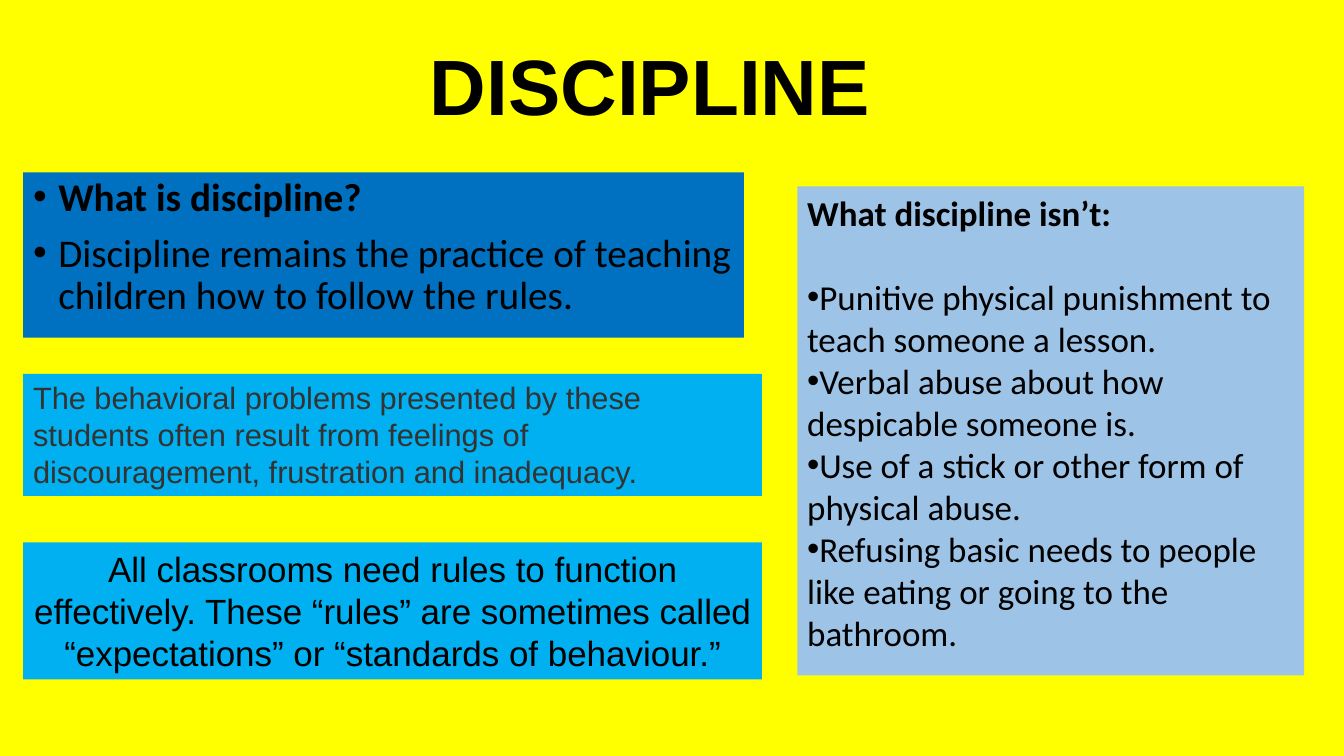
from dataclasses import dataclass

from lxml.etree import SubElement
from pptx import Presentation
from pptx.dml.color import RGBColor
from pptx.enum.shapes import MSO_SHAPE
from pptx.enum.text import MSO_ANCHOR, PP_ALIGN
from pptx.oxml.ns import qn
from pptx.util import Pt


@dataclass(frozen=True)
class Theme:
    background: str = "FFFF00"
    definition: str = "0070C0"
    note: str = "00B0F0"
    contrast: str = "9DC3E6"
    ink: str = "000000"
    soft_ink: str = "333333"
    heading_font: str = "Arial"
    body_font: str = "Calibri"
    title_size: float = 56
    definition_size: float = 28
    text_size: float = 25
    small_size: float = 22


THEME = Theme()
LEFT = 16.56
NOTE_WIDTH = 527.76


def add_panel(slide, place, fill, anchor=MSO_ANCHOR.TOP):
    """Add a filled rectangle, or a plain text box when fill is None."""
    lengths = [Pt(length) for length in place]
    if fill is None:
        box = slide.shapes.add_textbox(*lengths)
    else:
        box = slide.shapes.add_shape(MSO_SHAPE.RECTANGLE, *lengths)
        box.shadow.inherit = False
        box.fill.solid()
        box.fill.fore_color.rgb = RGBColor.from_string(fill)
        box.line.fill.background()
    box.text_frame.word_wrap = True
    box.text_frame.vertical_anchor = anchor
    return box


def write(box, lines, font, size, color=THEME.ink, bold_first=False, align=PP_ALIGN.LEFT):
    """Write one paragraph per line in a shared style."""
    frame = box.text_frame
    frame.text = "\n".join(lines)
    for index, para in enumerate(frame.paragraphs):
        para.alignment = align
        for span in para.runs:
            span.font.name = font
            span.font.size = Pt(size)
            span.font.bold = bold_first and index == 0
            span.font.color.rgb = RGBColor.from_string(color)
    return frame.paragraphs


def add_bullet(para, indent=0):
    """Give a paragraph a round bullet with a hanging indent in points."""
    properties = para._p.get_or_add_pPr()
    properties.set("marL", str(Pt(indent)))
    properties.set("indent", str(-Pt(indent)))
    SubElement(properties, qn("a:buFont"), typeface="Arial")
    SubElement(properties, qn("a:buChar"), char="•")


def add_title(slide):
    box = add_panel(slide, (50.4, 12.24, 828, 104.4), None, MSO_ANCHOR.MIDDLE)
    para = write(box, ["DISCIPLINE"], THEME.heading_font, THEME.title_size,
                 bold_first=True, align=PP_ALIGN.CENTER)[0]
    para.line_spacing = 0.9


def add_definition(slide):
    box = add_panel(slide, (LEFT, 123.12, 514.8, 118.08), THEME.definition)
    lines = ["What is discipline?",
             "Discipline remains the practice of teaching children how to follow the rules.\u00a0"]
    for para in write(box, lines, THEME.body_font, THEME.definition_size, bold_first=True):
        para.line_spacing = 0.9
        para.space_before = Pt(10)
        add_bullet(para, indent=18)


def add_contrast(slide):
    box = add_panel(slide, (569.52, 133.2, 362.16, 349.2), THEME.contrast)
    lines = ["What discipline isn’t:",
             "Punitive physical punishment to teach someone a lesson.",
             "Verbal abuse about how despicable someone is.",
             "Use of a stick or other form of physical abuse.",
             "Refusing basic needs to people like eating or going to the bathroom."]
    heading, *points = write(box, lines, THEME.body_font, THEME.text_size, bold_first=True)
    heading.space_after = Pt(30)
    for para in points:
        add_bullet(para)


def add_note(slide, top, height, text, size, color, align):
    box = add_panel(slide, (LEFT, top, NOTE_WIDTH, height), THEME.note)
    write(box, [text], THEME.heading_font, size, color, align=align)


def main():
    deck = Presentation()
    deck.slide_width, deck.slide_height = Pt(960), Pt(540)
    page = deck.slides.add_slide(deck.slide_layouts[6])
    page.background.fill.solid()
    page.background.fill.fore_color.rgb = RGBColor.from_string(THEME.background)

    # Title and the two contrasting lists
    add_title(page)
    add_definition(page)
    add_contrast(page)

    # Notes on classrooms
    add_note(page, 387.36, 97.92,
             "All classrooms need rules to function effectively. These “rules” are "
             "sometimes called “expectations” or “standards of behaviour.”",
             THEME.text_size, THEME.ink, PP_ALIGN.CENTER)
    add_note(page, 267.12, 87.12,
             "The behavioral problems presented by these students often result from "
             "feelings of discouragement, frustration and inadequacy.",
             THEME.small_size, THEME.soft_ink, PP_ALIGN.LEFT)

    deck.save("out.pptx")


if __name__ == "__main__":
    main()
